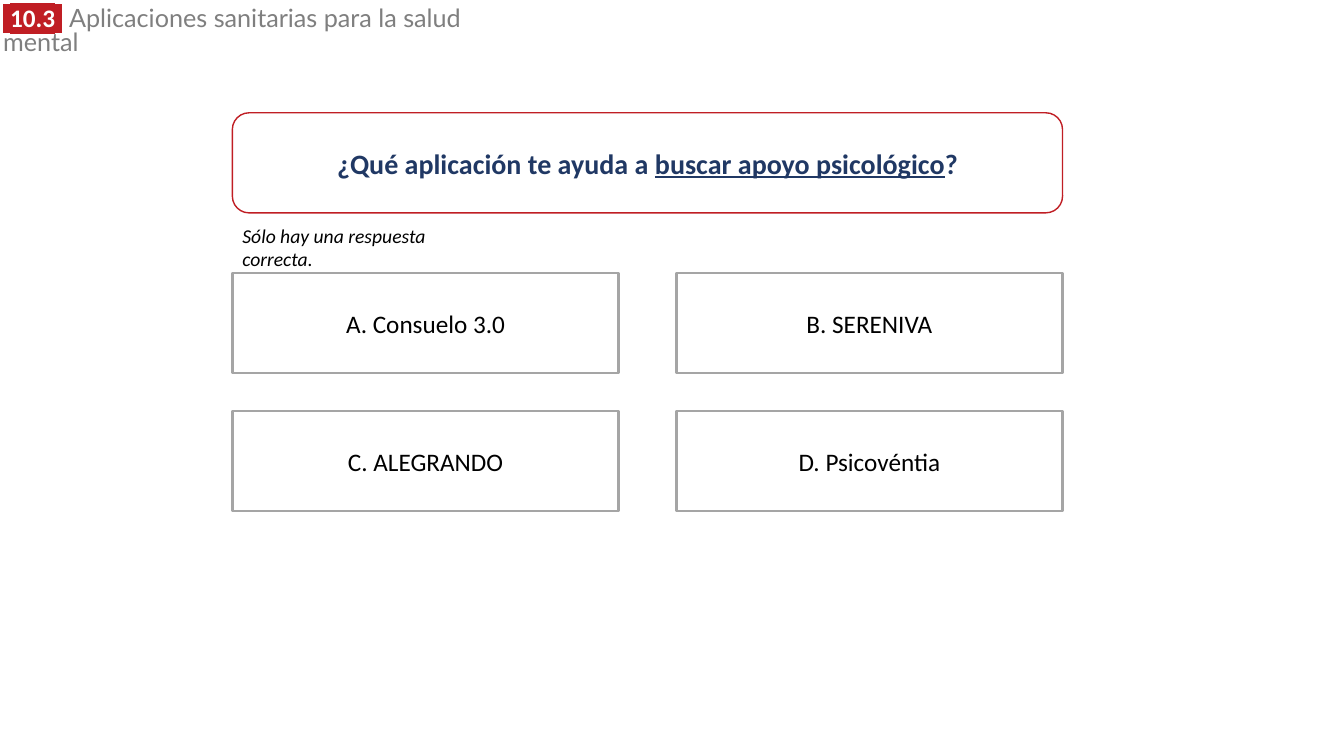
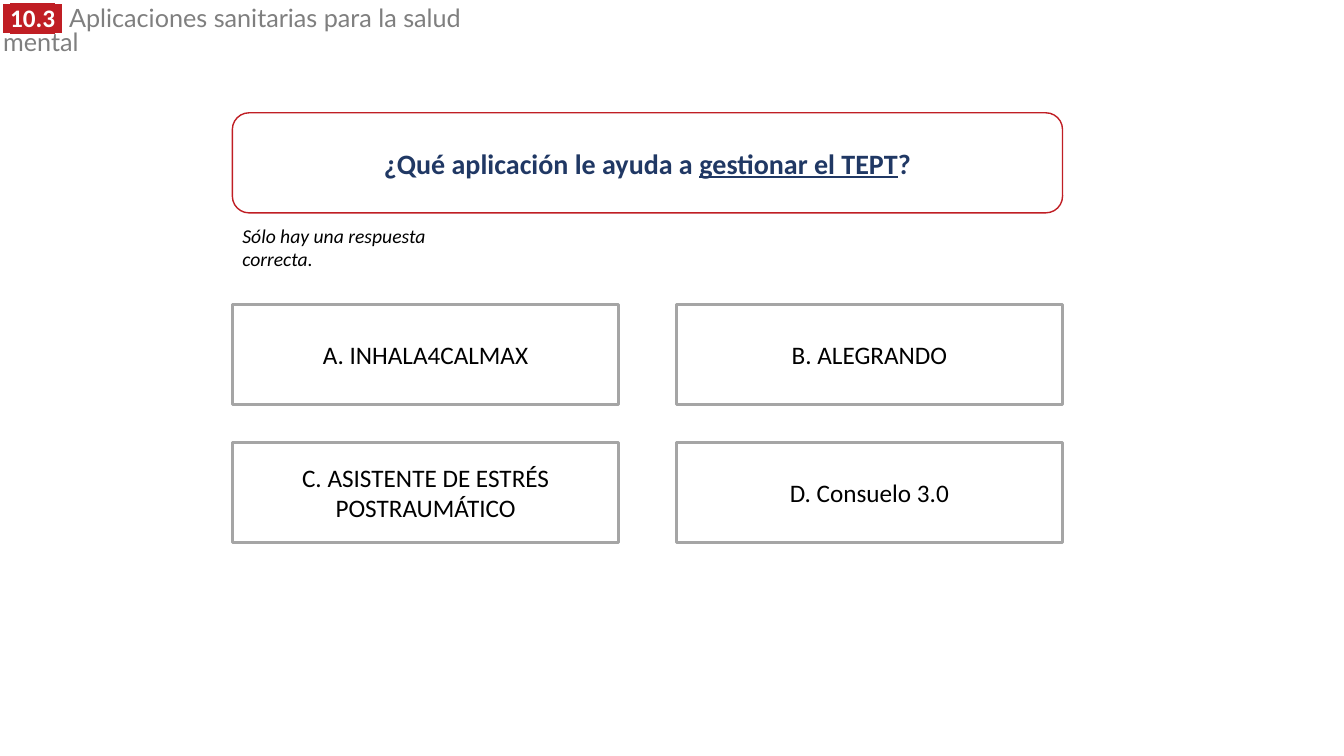
from lxml.etree import SubElement
from pptx import Presentation
from pptx.dml.color import RGBColor
from pptx.enum.shapes import MSO_SHAPE
from pptx.enum.text import MSO_ANCHOR, MSO_AUTO_SIZE, PP_ALIGN
from pptx.oxml.ns import qn
from pptx.util import Pt

RED = RGBColor(0xC0, 0x1E, 0x24)
NAVY = RGBColor(0x20, 0x38, 0x64)
GRAY = RGBColor(0x7F, 0x7F, 0x7F)
BORDER = RGBColor(0xA5, 0xA5, 0xA5)
BLACK = RGBColor(0, 0, 0)
WHITE = RGBColor(0xFF, 0xFF, 0xFF)

LEFT, FULL_WIDTH, BOX_HEIGHT = 166, 593, 71.5
OPTION_WIDTH, ROW_STEP = 276, 98.6
COLUMN_STEP = FULL_WIDTH - OPTION_WIDTH

QUESTIONS = [
    {
        "question": ("¿Qué aplicación te ayuda a ", "buscar apoyo psicológico", "?"),
        "options": ["Consuelo 3.0", "SERENIVA", "ALEGRANDO", "Psicovéntia"],
        "options_top": 195,
    },
    {
        "question": ("¿Qué aplicación le ayuda a ", "gestionar el TEPT", "?"),
        "options": ["INHALA4CALMAX", "ALEGRANDO",
                    "ASISTENTE DE ESTRÉS POSTRAUMÁTICO", "Consuelo 3.0"],
        "options_top": 217.4,
    },
]


def add_span(para, text, size=18, font="Calibri", color=BLACK, bold=False,
             italic=False, underline=False, highlight=None):
    span = para.add_run()
    span.text = text
    style = span.font
    style.size, style.name = Pt(size), font
    style.bold, style.italic, style.underline = bold, italic, underline
    style.color.rgb = color
    if highlight is not None:
        properties = span._r.get_or_add_rPr()
        mark = SubElement(properties, qn("a:highlight"))
        SubElement(mark, qn("a:srgbClr"), val=str(highlight))
        properties.find(qn("a:solidFill")).addnext(mark)


class QuizDeck:
    """Holds the presentation, its style and the page being built."""

    def __init__(self):
        self.deck = Presentation()
        self.deck.slide_width, self.deck.slide_height = Pt(960), Pt(540)
        self.page = None

    def add_page(self):
        self.page = self.deck.slides.add_slide(self.deck.slide_layouts[5])
        self.add_title("10.3", "Aplicaciones sanitarias para la salud mental")

    def add_title(self, number, text):
        title = self.page.shapes.title
        title.left, title.top, title.width, title.height = Pt(0), Pt(2), Pt(392), Pt(40)
        frame = title.text_frame
        frame.auto_size = MSO_AUTO_SIZE.NONE
        frame.word_wrap = True
        frame.vertical_anchor = MSO_ANCHOR.TOP
        frame.margin_left = Pt(2.2)
        para = frame.paragraphs[0]
        para.alignment = PP_ALIGN.LEFT
        para.line_spacing = 0.8
        for label, font in ((" ", "Arial"), (number, "Calibri"), (" ", "Arial")):
            add_span(para, label, font=font, color=WHITE, bold=True, highlight=RED)
        add_span(para, " ", font="Arial", color=GRAY)
        add_span(para, text, font="Lato", color=GRAY)

    def add_box(self, kind, left, top, width, line_color, line_width):
        """Add an outlined box and return its centred paragraph."""
        box = self.page.shapes.add_shape(
            kind, Pt(left), Pt(top), Pt(width), Pt(BOX_HEIGHT))
        box.shadow.inherit = False
        box.fill.solid()
        box.fill.fore_color.rgb = WHITE
        box.line.color.rgb = line_color
        box.line.width = Pt(line_width)
        frame = box.text_frame
        frame.word_wrap = True
        frame.vertical_anchor = MSO_ANCHOR.MIDDLE
        para = frame.paragraphs[0]
        para.alignment = PP_ALIGN.CENTER
        return para

    def add_question(self, before, key_phrase, after):
        para = self.add_box(MSO_SHAPE.ROUNDED_RECTANGLE, LEFT, 80.6, FULL_WIDTH, RED, 1)
        for text in (before, key_phrase, after):
            add_span(para, text, size=20, color=NAVY, bold=True,
                     underline=text == key_phrase)

    def add_hint(self, text):
        box = self.page.shapes.add_textbox(Pt(LEFT), Pt(156.2), Pt(170), Pt(41))
        box.text_frame.word_wrap = True
        add_span(box.text_frame.paragraphs[0], text, size=14, italic=True)

    def add_options(self, options, top):
        for index, (letter, option) in enumerate(zip("ABCD", options)):
            row, column = divmod(index, 2)
            para = self.add_box(MSO_SHAPE.RECTANGLE, LEFT + column * COLUMN_STEP,
                                top + row * ROW_STEP, OPTION_WIDTH, BORDER, 2)
            add_span(para, f"{letter}. {option}")


def main():
    quiz = QuizDeck()
    for item in QUESTIONS:
        quiz.add_page()
        quiz.add_question(*item["question"])
        quiz.add_hint("Sólo hay una respuesta correcta.")
        quiz.add_options(item["options"], item["options_top"])
    quiz.deck.save("out.pptx")


if __name__ == "__main__":
    main()
